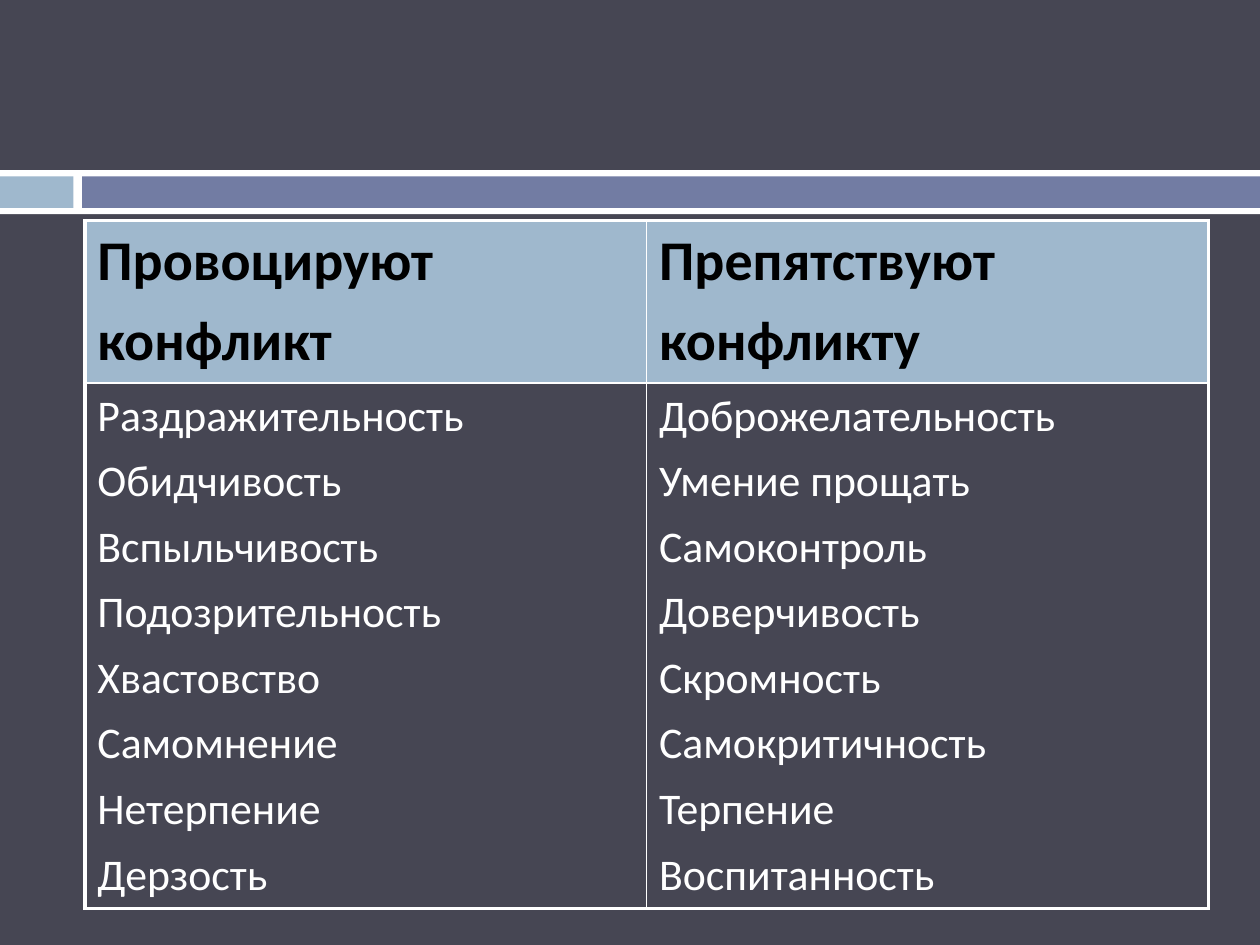
import lxml.etree
import pptx
import pptx.dml.color
import pptx.enum.shapes
import pptx.oxml.ns
import pptx.util

WHITE, BLACK = "FFFFFF", "000000"
BACKGROUND, LIGHT_BLUE, VIOLET = "464653", "9FB8CD", "727CA3"

HEADERS = [["Провоцируют", "конфликт"], ["Препятствуют", "конфликту"]]
TRAITS = [
    ["Раздражительность", "Обидчивость", "Вспыльчивость", "Подозрительность",
     "Хвастовство", "Самомнение", "Нетерпение", "Дерзость"],
    ["Доброжелательность", "Умение прощать", "Самоконтроль", "Доверчивость",
     "Скромность", "Самокритичность", "Терпение", "Воспитанность"],
]


def set_color(fill, color):
    """Make a fill solid in a hex colour."""
    fill.solid()
    fill.fore_color.rgb = pptx.dml.color.RGBColor.from_string(color)


def write_text(text_frame, lines, size, color, bold=False, space_before=7):
    """Write each line as a paragraph with one shared format."""
    for index, line in enumerate(lines):
        paragraph = text_frame.add_paragraph() if index else text_frame.paragraphs[0]
        paragraph.space_before = pptx.util.Pt(space_before)
        run = paragraph.add_run()
        run.text = line
        run.font.name = "Calibri"
        run.font.size = pptx.util.Pt(size)
        run.font.bold = bold
        set_color(run.font.fill, color)


def add_bar(slide, left, top, width, height, color):
    """Add a plain filled rectangle."""
    box = map(pptx.util.Pt, (left, top, width, height))
    shape = slide.shapes.add_shape(pptx.enum.shapes.MSO_SHAPE.RECTANGLE, *box)
    shape.shadow.inherit = False
    set_color(shape.fill, color)
    shape.line.fill.background()


def add_band(slide, left, top, width, height):
    """Add the white band with its short and long inner bars."""
    inset, short_width, gap = 3.6, 42, 5
    long_left = left + short_width + gap
    inner_top, inner_height = top + inset, height - 2 * inset
    add_bar(slide, left, top, width, height, WHITE)
    add_bar(slide, left, inner_top, short_width, inner_height, LIGHT_BLUE)
    add_bar(slide, long_left, inner_top, left + width - long_left, inner_height, VIOLET)


def set_borders(cell, widths):
    """Draw white borders from widths given for left, right, top and bottom."""
    properties = cell._tc.get_or_add_tcPr()
    for side, width in zip("LRTB", widths):
        line = lxml.etree.SubElement(properties, pptx.oxml.ns.qn(f"a:ln{side}"),
                                     w=str(pptx.util.Pt(width)))
        fill = lxml.etree.SubElement(line, pptx.oxml.ns.qn("a:solidFill"))
        lxml.etree.SubElement(fill, pptx.oxml.ns.qn("a:srgbClr"), val=WHITE)


def add_traits_table(slide, left, top, width, header_height, body_height):
    """Add the two-column table with thick outer and thin inner borders."""
    outer, inner = 2.25, 1
    box = map(pptx.util.Pt, (left, top, width, header_height + body_height))
    table = slide.shapes.add_table(2, 2, *box).table
    for row, height in zip(table.rows, (header_height, body_height)):
        row.height = pptx.util.Pt(height)
    for column_index, column in enumerate(table.columns):
        column.width = pptx.util.Pt(width / 2)
        sides = (inner, outer) if column_index else (outer, inner)
        header, body = table.cell(0, column_index), table.cell(1, column_index)
        set_borders(header, (*sides, outer, inner))
        set_borders(body, (*sides, inner, outer))
        set_color(header.fill, LIGHT_BLUE)
        body.fill.background()
        write_text(header.text_frame, HEADERS[column_index], size=32, color=BLACK, bold=True)
        write_text(body.text_frame, TRAITS[column_index], size=25, color=WHITE)


def main():
    """Build the slide and save it."""
    presentation = pptx.Presentation()
    presentation.slide_width = pptx.util.Pt(720)
    presentation.slide_height = pptx.util.Pt(540)
    slide = presentation.slides.add_slide(presentation.slide_layouts.get_by_name("Blank"))
    set_color(slide.background.fill, BACKGROUND)
    add_band(slide, left=0, top=97.2, width=720, height=25.2)
    add_traits_table(slide, left=48.5, top=126, width=642, header_height=93, body_height=300)
    presentation.save("out.pptx")


if __name__ == "__main__":
    main()
